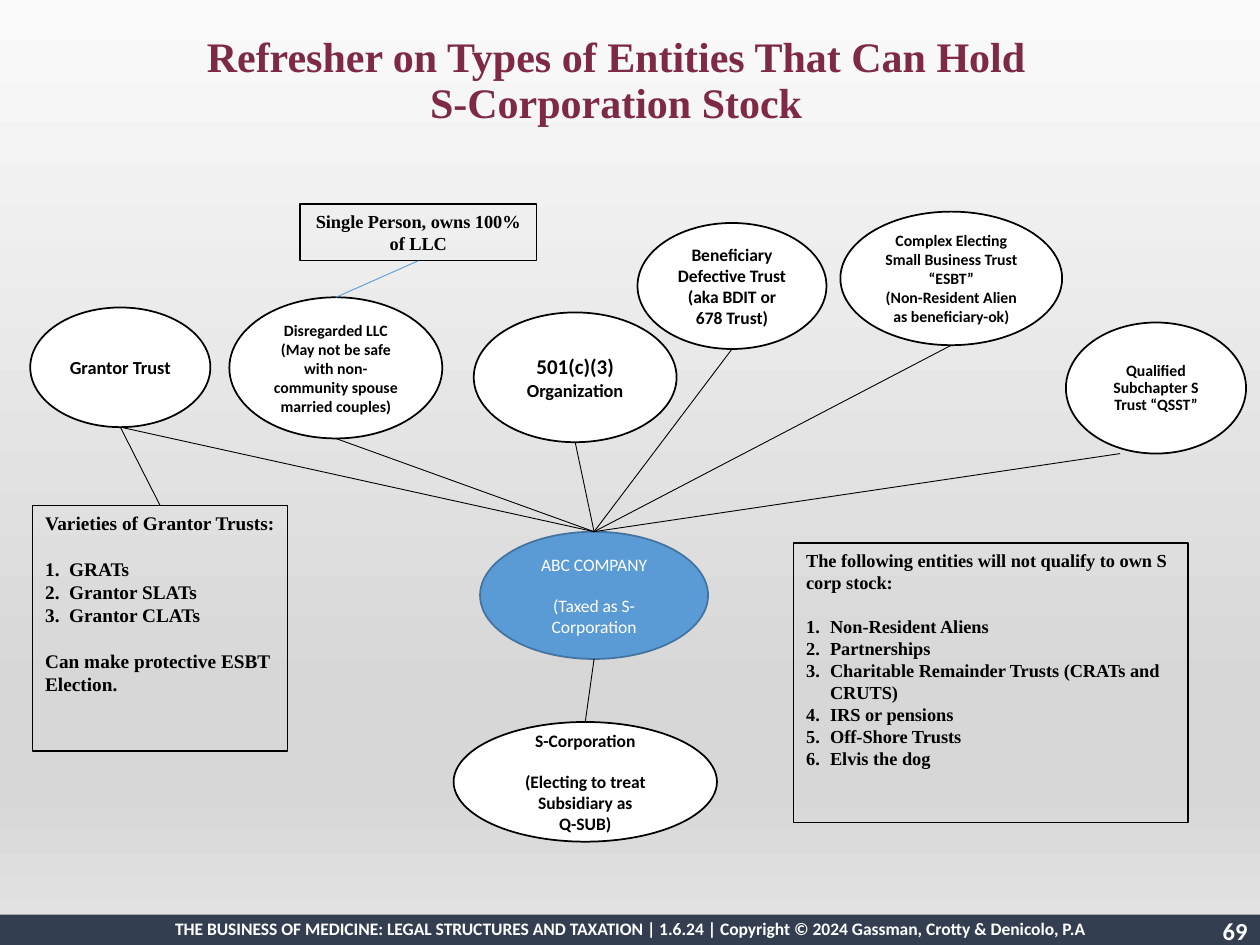
from lxml import etree
from pptx import Presentation
from pptx.dml.color import RGBColor
from pptx.enum.shapes import MSO_CONNECTOR, MSO_SHAPE
from pptx.enum.text import MSO_ANCHOR, MSO_AUTO_SIZE, PP_ALIGN
from pptx.oxml.ns import qn
from pptx.util import Inches, Pt

LEFT, CENTER, RIGHT = PP_ALIGN.LEFT, PP_ALIGN.CENTER, PP_ALIGN.RIGHT
TOP, MIDDLE = MSO_ANCHOR.TOP, MSO_ANCHOR.MIDDLE
OVAL, RECT = MSO_SHAPE.OVAL, MSO_SHAPE.RECTANGLE
STRAIGHT = MSO_CONNECTOR.STRAIGHT
SANS, SERIF = "Calibri", "Times New Roman"
COLORS = {
    "title": "7E2A44", "black": "000000", "white": "FFFFFF",
    "company": "5B9BD5", "company_edge": "43739E", "footer": "333F50",
}
BACKGROUND_STOPS = [(0, "FAFAFA"), (74, "D7D7D7"), (83, "D7D7D7"), (100, "E4E4E4")]


def color(name):
    return RGBColor.from_string(COLORS[name])


def write(shape, paragraphs, size=10, font=SANS, ink="black", bold=True, align=CENTER,
          anchor=MIDDLE, spacing=None, gaps=(), numbered=()):
    """Fill a shape with paragraphs, each a string or a list of (text, size) runs.

    gaps and numbered hold the indices of paragraphs set off by a line or auto-numbered.
    """
    frame = shape.text_frame
    frame.word_wrap = True
    frame.auto_size = MSO_AUTO_SIZE.NONE
    frame.vertical_anchor = anchor
    for index, content in enumerate(paragraphs):
        paragraph = frame.paragraphs[0] if index == 0 else frame.add_paragraph()
        if index in numbered:
            properties = paragraph._p.get_or_add_pPr()
            properties.set("marL", str(Inches(0.19)))
            properties.set("indent", str(-Inches(0.19)))
            etree.SubElement(properties, qn("a:buAutoNum"), type="arabicPeriod")
        paragraph.alignment = align
        if spacing:
            paragraph.line_spacing = spacing
        if index in gaps:
            paragraph.space_before = Pt(round(size * 1.17, 1))
        runs = [(content, size)] if isinstance(content, str) else content
        for text, run_size in runs:
            run = paragraph.add_run()
            run.text = text
            run.font.name = font
            run.font.size = Pt(run_size)
            run.font.bold = bold
            run.font.color.rgb = color(ink)


prs = Presentation()
prs.slide_width, prs.slide_height = Inches(10), Inches(7.5)
slide = prs.slides.add_slide(prs.slide_layouts[5])
shapes = slide.shapes

# Background gradient, top to bottom
background = slide.background.fill
background.gradient()
background.gradient_angle = 270
stops = slide.element.find(".//" + qn("a:gsLst"))
for stop in list(stops):
    stops.remove(stop)
for position, tone in BACKGROUND_STOPS:
    stop = etree.SubElement(stops, qn("a:gs"), pos=str(position * 1000))
    etree.SubElement(stop, qn("a:srgbClr"), val=tone)

# Title and footer
title = shapes.title
title.left, title.top, title.width, title.height = map(Inches, (1.38, 0.39, 7.02, 0.52))
write(title, ["Refresher on Types of Entities That Can Hold S-Corporation Stock"],
      size=24, font=SERIF, ink="title", spacing=0.9)

footer_bar = shapes.add_shape(RECT, 0, Inches(7.26), Inches(10), Inches(0.24))
footer_bar.shadow.inherit = False
footer_bar.fill.solid()
footer_bar.fill.fore_color.rgb = color("footer")
footer_bar.line.fill.background()
page_number = shapes.add_textbox(Inches(8.18), Inches(7.22), Inches(1.82), Inches(0.4))
write(page_number, ["69"], size=14, ink="white", align=RIGHT, anchor=TOP)
copyright_line = shapes.add_textbox(Inches(0.7), Inches(7.24), Inches(8.6), Inches(0.27))
write(copyright_line, ["THE BUSINESS OF MEDICINE: LEGAL STRUCTURES AND TAXATION | 1.6.24 | "
                       "Copyright © 2024 Gassman, Crotty & Denicolo, P.A"],
      ink="white", anchor=TOP)

# Entities: key, bounds, paragraphs, text format
ENTITIES = [
    ("qsst", (8.46, 2.56, 1.43, 1.04), ["Qualified Subchapter S Trust “QSST”"],
     {"size": 9, "spacing": 0.9}),
    ("esbt", (6.67, 1.68, 1.76, 1.06),
     ["Complex Electing Small Business Trust “ESBT”",
      "(Non-Resident Alien as beneficiary-ok)"], {"size": 9}),
    ("bdit", (5.06, 1.77, 1.5, 1),
     ["Beneficiary Defective Trust (aka BDIT or 678 Trust)"], {}),
    ("charity", (3.76, 2.48, 1.61, 1.03),
     [[("501(c)(3) ", 12), ("Organization", 10.5)]], {}),
    ("company", (3.81, 4.22, 1.81, 1.01), ["ABC COMPANY", "(Taxed as S-Corporation"],
     {"ink": "white", "bold": False, "gaps": [1]}),
    ("grantor", (0.24, 2.44, 1.43, 0.95), ["Grantor Trust"], {"size": 10.5}),
    ("llc", (1.82, 2.36, 1.69, 1.12),
     ["Disregarded LLC", "(May not be safe with non-community spouse married couples)"],
     {"size": 9}),
    ("subsidiary", (3.6, 5.73, 2.09, 0.95),
     ["S-Corporation", "(Electing to treat Subsidiary as", "Q-SUB)"], {"gaps": [1]}),
]
NOTES = [
    ("varieties", (0.26, 4.01, 2.02, 1.95),
     ["Varieties of Grantor Trusts:", "GRATs", "Grantor SLATs", "Grantor CLATs",
      "Can make protective ESBT Election."],
     {"size": 11, "align": LEFT, "gaps": [1, 4], "numbered": range(1, 4)}),
    ("owner", (2.38, 1.62, 1.88, 0.45), ["Single Person, owns 100% of LLC"], {"size": 10.5}),
    ("excluded", (6.3, 4.31, 3.13, 2.22),
     ["The following entities will not qualify to own S corp stock:",
      "Non-Resident Aliens", "Partnerships",
      "Charitable Remainder Trusts (CRATs and CRUTS)", "IRS or pensions",
      "Off-Shore Trusts", "Elvis the dog"],
     {"size": 10.5, "align": LEFT, "gaps": [1], "numbered": range(1, 7)}),
]

top_of, bottom_of = {}, {}
for key, bounds, paragraphs, text_format in ENTITIES + NOTES:
    left, top, width, height = bounds
    is_note = (key, bounds, paragraphs, text_format) in NOTES
    node = shapes.add_shape(RECT if is_note else OVAL, *map(Inches, bounds))
    node.shadow.inherit = False
    if is_note:
        node.fill.background()
        text_format = {"font": SERIF, "anchor": TOP, **text_format}
    else:
        node.fill.solid()
        node.fill.fore_color.rgb = color("company" if key == "company" else "white")
    node.line.color.rgb = color("company_edge" if key == "company" else "black")
    node.line.width = Pt(0.75 if is_note else 1)
    write(node, paragraphs, **text_format)
    top_of[key] = (left + width / 2, top)
    bottom_of[key] = (left + width / 2, top + height)

# Ownership lines
bottom_of["qsst"] = (8.89, 3.6)
holders = ["charity", "bdit", "esbt", "qsst", "llc", "grantor"]
links = [(holder, "company", "black") for holder in holders]
links += [("grantor", "varieties", "black"), ("owner", "llc", "company"),
          ("company", "subsidiary", "black")]
for upper, lower, ink in links:
    link = shapes.add_connector(STRAIGHT, *map(Inches, bottom_of[upper] + top_of[lower]))
    link.line.color.rgb = color(ink)
    link.line.width = Pt(0.5)
    etree.SubElement(link._element.spPr, qn("a:effectLst"))

prs.save("out.pptx")
